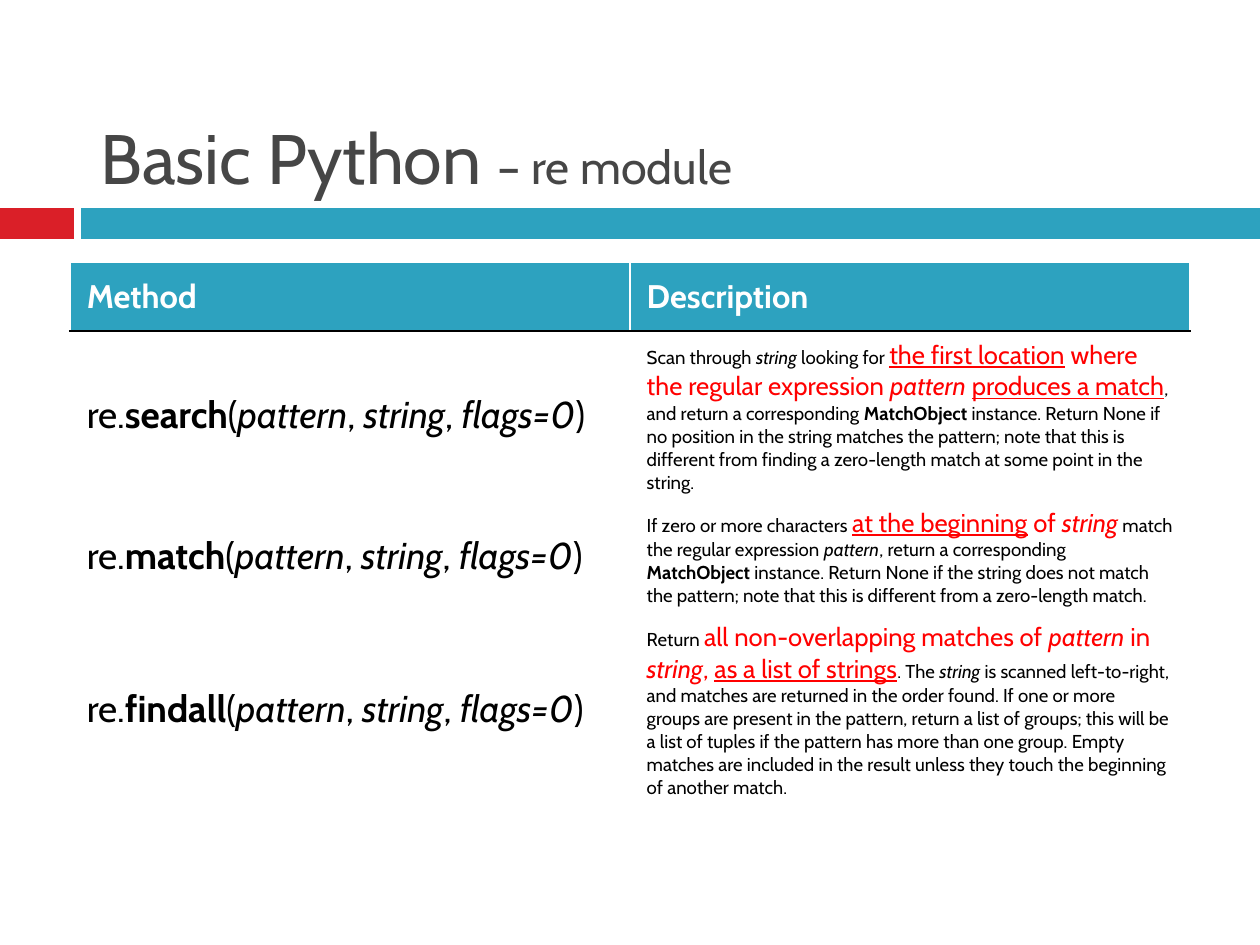
from lxml.etree import SubElement
from pptx import Presentation
from pptx.dml.color import RGBColor
from pptx.enum.shapes import MSO_SHAPE as Shape
from pptx.enum.text import MSO_ANCHOR as Anchor
from pptx.oxml.ns import qn
from pptx.util import Pt

COLORS = {"red_bar": "DA1F28", "teal": "2DA2BF", "title": "464646",
          "white": "FFFFFF", "black": "000000", "key": "FF0000"}
FONT = "Cabin"
SLIDE_SIZE = 1260, 945
TITLE_BOX = 84, 22, 1124, 185
TABLE_BOX = 70, 262, 1120, 497
ROW_HEIGHT = 69  # minimum; rows grow with their text
BARS = [("red_bar", (0, 208, 74, 31)), ("teal", (81, 208, 1179, 31))]

# Each run is (text, marks): b bold, i italic, u underline, k key phrase
TITLE = [("Basic Python ", 30), ("– re module", 20)]
HEADINGS = ["Method", "Description"]
METHODS = [
    ("search", [
        ("Scan through ", ""), ("string", "i"), (" looking for ", ""),
        ("the first location", "ku"), (" where the regular expression ", "k"),
        ("pattern ", "ki"), ("produces a match", "ku"),
        (", and return a corresponding ", ""), ("MatchObject", "b"),
        (" instance. Return None if no position in the string matches the "
         "pattern; note that this is different from finding a zero-length "
         "match at some point in the string.", "")]),
    ("match", [
        ("If zero or more characters ", ""), ("at the beginning", "ku"),
        (" of ", "k"), ("string", "ki"),
        (" match the regular expression ", ""), ("pattern", "i"),
        (", return a corresponding ", ""), ("MatchObject", "b"),
        (" instance. Return None if the string does not match the pattern; "
         "note that this is different from a zero-length match.", "")]),
    ("findall", [
        ("Return ", ""), ("all non-overlapping matches of ", "k"),
        ("pattern", "ki"), (" in ", "k"), ("string", "ki"), (", ", "k"),
        ("as a list of strings", "ku"), (". The ", ""), ("string", "i"),
        (" is scanned left-to-right, and matches are returned in the order "
         "found. If one or more groups are present in the pattern, return a "
         "list of groups; this will be a list of tuples if the pattern has "
         "more than one group. Empty matches are included in the result "
         "unless they touch the beginning of another match.", "")]),
]
ARGUMENTS = [("(", ""), ("pattern", "i"), (", ", ""), ("string", "i"),
             (", ", ""), ("flags=0", "i"), (")", "")]


def px(length):
    return round(length * 914400 / 168)


def box(lengths):
    return [px(length) for length in lengths]


def rgb(color):
    return RGBColor.from_string(COLORS[color])


def add_text(paragraph, text, size, color="black", marks=""):
    run = paragraph.add_run()
    run.text = text
    font = run.font
    font.name, font.size = FONT, Pt(size)
    font.color.rgb = rgb(color)
    font.bold, font.italic = "b" in marks, "i" in marks
    font.underline = "u" in marks


def set_borders(cell, **sides):
    """Draw 1 pt cell borders; these must precede the fill in the XML."""
    properties = cell._tc.get_or_add_tcPr()
    for side in "LRTB":
        line = SubElement(properties, qn(f"a:ln{side}"), w=str(Pt(1)))
        fill = SubElement(line, qn("a:solidFill"))
        SubElement(fill, qn("a:srgbClr"), val=COLORS[sides.get(side, "white")])


deck = Presentation()
deck.slide_width, deck.slide_height = box(SLIDE_SIZE)
slide = deck.slides.add_slide(deck.slide_layouts[6])

for color, place in BARS:
    bar = slide.shapes.add_shape(Shape.RECTANGLE, *box(place))
    bar.shadow.inherit = False
    bar.fill.solid()
    bar.fill.fore_color.rgb = rgb(color)
    bar.line.fill.background()

title = slide.shapes.add_textbox(*box(TITLE_BOX)).text_frame
title.word_wrap = True
title.vertical_anchor = Anchor.BOTTOM
for text, size in TITLE:
    add_text(title.paragraphs[0], text, size, "title")

frame = slide.shapes.add_table(len(METHODS) + 1, len(HEADINGS), *box(TABLE_BOX))
table = frame.table
table.horz_banding = False
for row in table.rows:
    row.height = px(ROW_HEIGHT)
frame.height = px(TABLE_BOX[3])

for column, heading in enumerate(HEADINGS):
    cell = table.cell(0, column)
    cell.vertical_anchor = Anchor.MIDDLE
    set_borders(cell, B="black")
    cell.fill.solid()
    cell.fill.fore_color.rgb = rgb("teal")
    add_text(cell.text_frame.paragraphs[0], heading, 14, "white", "b")

for row, (method, description) in enumerate(METHODS, 1):
    signature, details = table.cell(row, 0), table.cell(row, 1)
    for cell in (signature, details):
        set_borders(cell, T="black" if row == 1 else "white")
        cell.fill.background()
    signature.vertical_anchor = Anchor.MIDDLE
    for text, marks in [("re.", ""), (method, "b"), *ARGUMENTS]:
        add_text(signature.text_frame.paragraphs[0], text, 16, marks=marks)
    for text, marks in description:
        size, color = (11, "key") if "k" in marks else (8, "black")
        add_text(details.text_frame.paragraphs[0], text, size, color, marks)

deck.save("out.pptx")
